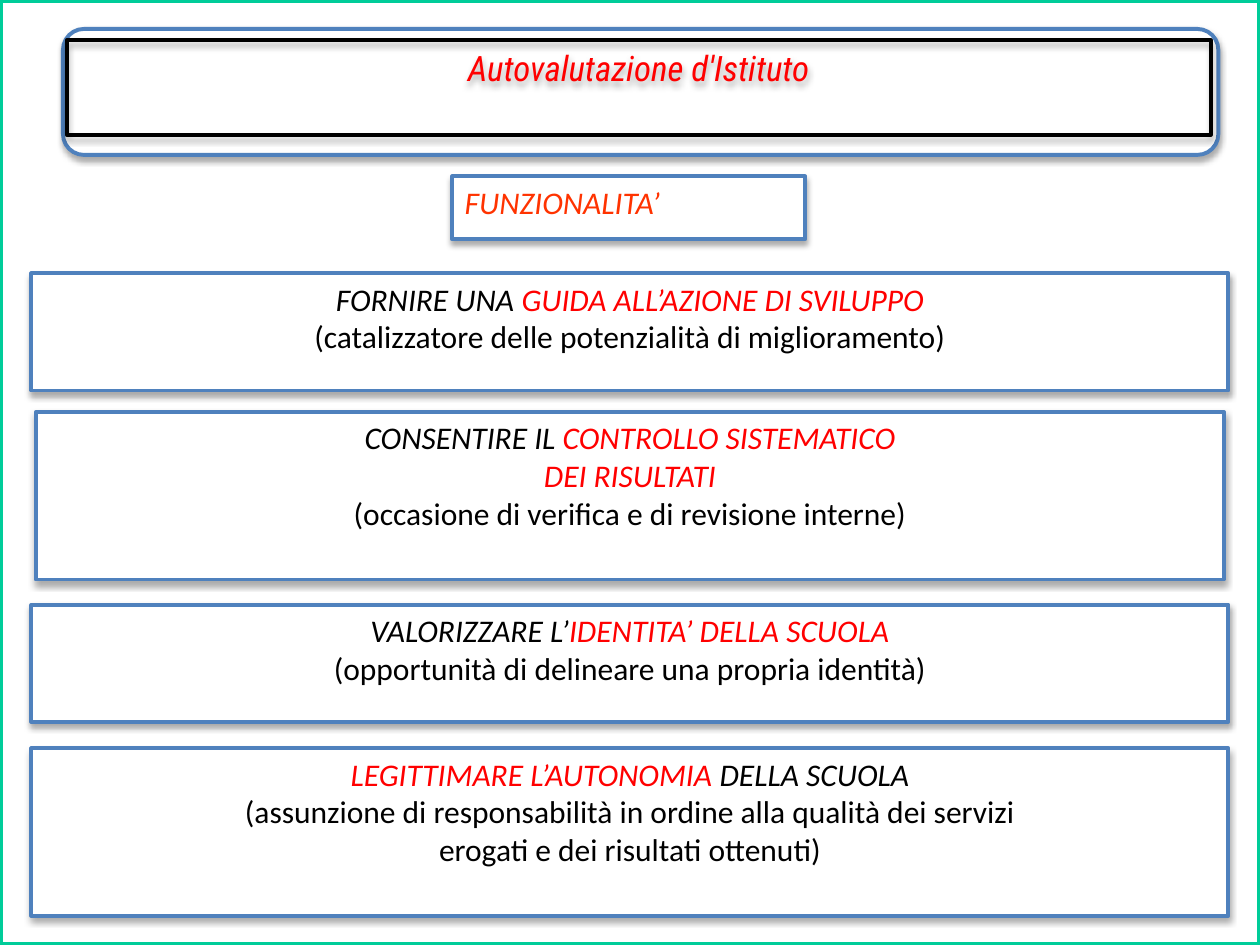
from lxml import etree
from pptx import Presentation
from pptx.dml.color import RGBColor
from pptx.enum.shapes import MSO_SHAPE
from pptx.enum.text import MSO_ANCHOR, MSO_AUTO_SIZE, PP_ALIGN
from pptx.oxml import parse_xml
from pptx.oxml.ns import nsdecls, qn
from pptx.util import Inches, Pt

RECT, ROUNDED = MSO_SHAPE.RECTANGLE, MSO_SHAPE.ROUNDED_RECTANGLE
LEFT, CENTER = PP_ALIGN.LEFT, PP_ALIGN.CENTER
TOP, NO_AUTOFIT = MSO_ANCHOR.TOP, MSO_AUTO_SIZE.NONE

WIDTH, HEIGHT = 10, 7.5
TITLE_ONLY = 5
WHITE, BLACK, RED, ORANGE = "FFFFFF", "000000", "FF0000", "FF3300"
BLUE, GREEN = "4F81BD", "00CC99"

# Each function: top, height, width, then lines of (text, colour, italic) runs
FUNCTIONS = [
    (2.17, 0.93, 9.5, [
        [("FORNIRE UNA ", BLACK, True), ("GUIDA ALL’AZIONE DI SVILUPPO", RED, True)],
        [("(catalizzatore delle potenzialità di miglioramento)", BLACK, False)]]),
    (3.27, 1.33, 9.43, [
        [("CONSENTIRE IL ", BLACK, True), ("CONTROLLO SISTEMATICO", RED, True)],
        [("DEI RISULTATI", RED, True)],
        [("(occasione di verifica e di revisione interne)", BLACK, False)]]),
    (4.8, 0.93, 9.5, [
        [("VALORIZZARE L’", BLACK, True), ("IDENTITA’ DELLA SCUOLA", RED, True)],
        [("(opportunità di delineare una propria identità)", BLACK, False)]]),
    (5.94, 1.33, 9.5, [
        [("LEGITTIMARE L’AUTONOMIA ", RED, True), ("DELLA SCUOLA", BLACK, True)],
        [("(assunzione di responsabilità in ordine alla qualità dei servizi", BLACK, False)],
        [("erogati e dei risultati ottenuti)", BLACK, False)]]),
]


def rgb(hex_colour):
    return RGBColor.from_string(hex_colour)


def set_outline(shape, colour, weight=2.25):
    shape.line.color.rgb = rgb(colour)
    shape.line.width = Pt(weight)


def add_shadow(shape):
    shape.shadow.inherit = False
    effects = shape.element.spPr.find(qn("a:effectLst"))
    shadow = etree.SubElement(effects, qn("a:outerShdw"), blurRad=str(Pt(3.5)),
                              dist=str(Pt(2.2)), dir="5400000", rotWithShape="0")
    colour = etree.SubElement(shadow, qn("a:srgbClr"), val=BLACK)
    etree.SubElement(colour, qn("a:alpha"), val="32000")


def write_lines(shape, lines, align, font="Calibri", size=18):
    frame = shape.text_frame
    frame.word_wrap = True
    frame.auto_size = NO_AUTOFIT
    frame.vertical_anchor = TOP
    for index, line in enumerate(lines):
        paragraph = frame.add_paragraph() if index else frame.paragraphs[0]
        paragraph.alignment = align
        for text, colour, italic in line:
            run = paragraph.add_run()
            run.text = text
            run.font.name = font
            run.font.size = Pt(size)
            run.font.italic = italic
            run.font.color.rgb = rgb(colour)


def add_panel(slide, left, top, width, height, preset=RECT):
    """White blue-edged box with a soft shadow below."""
    panel = slide.shapes.add_shape(preset, *map(Inches, (left, top, width, height)))
    panel.fill.solid()
    panel.fill.fore_color.rgb = rgb(WHITE)
    set_outline(panel, BLUE)
    add_shadow(panel)
    return panel


def add_border(slide):
    border = slide.shapes.add_shape(RECT, 0, 0, Inches(WIDTH), Inches(HEIGHT))
    border.fill.background()
    border.shadow.inherit = False
    set_outline(border, GREEN, 3)


def add_title(slide):
    add_panel(slide, 0.5, 0.23, 9.17, 1, ROUNDED)
    title = slide.shapes.title
    title.left, title.top, title.width, title.height = map(Inches, (0.53, 0.32, 9.08, 0.75))
    title.fill.background()
    set_outline(title, BLACK)
    add_shadow(title)
    write_lines(title, [[("Autovalutazione d'Istituto", RED, True)]], CENTER,
                "Roboto Condensed", 20)
    letter_edge = parse_xml(
        f'<a:ln {nsdecls("a")} w="{Pt(0.75)}"><a:solidFill>'
        f'<a:srgbClr val="{WHITE}"/></a:solidFill></a:ln>')
    title.element.find(".//" + qn("a:rPr")).insert(0, letter_edge)
    # Bring the title in front of its rounded panel
    title.element.getparent().append(title.element)


def main():
    prs = Presentation()
    prs.slide_width, prs.slide_height = Inches(WIDTH), Inches(HEIGHT)
    slide = prs.slides.add_slide(prs.slide_layouts[TITLE_ONLY])
    add_border(slide)
    add_title(slide)
    heading = add_panel(slide, 3.59, 1.4, 2.8, 0.5)
    write_lines(heading, [[("FUNZIONALITA’", ORANGE, True)]], LEFT)
    for top, height, width, lines in FUNCTIONS:
        panel = add_panel(slide, (WIDTH - width) / 2, top, width, height)
        write_lines(panel, lines, CENTER)
    prs.save("out.pptx")


if __name__ == "__main__":
    main()
